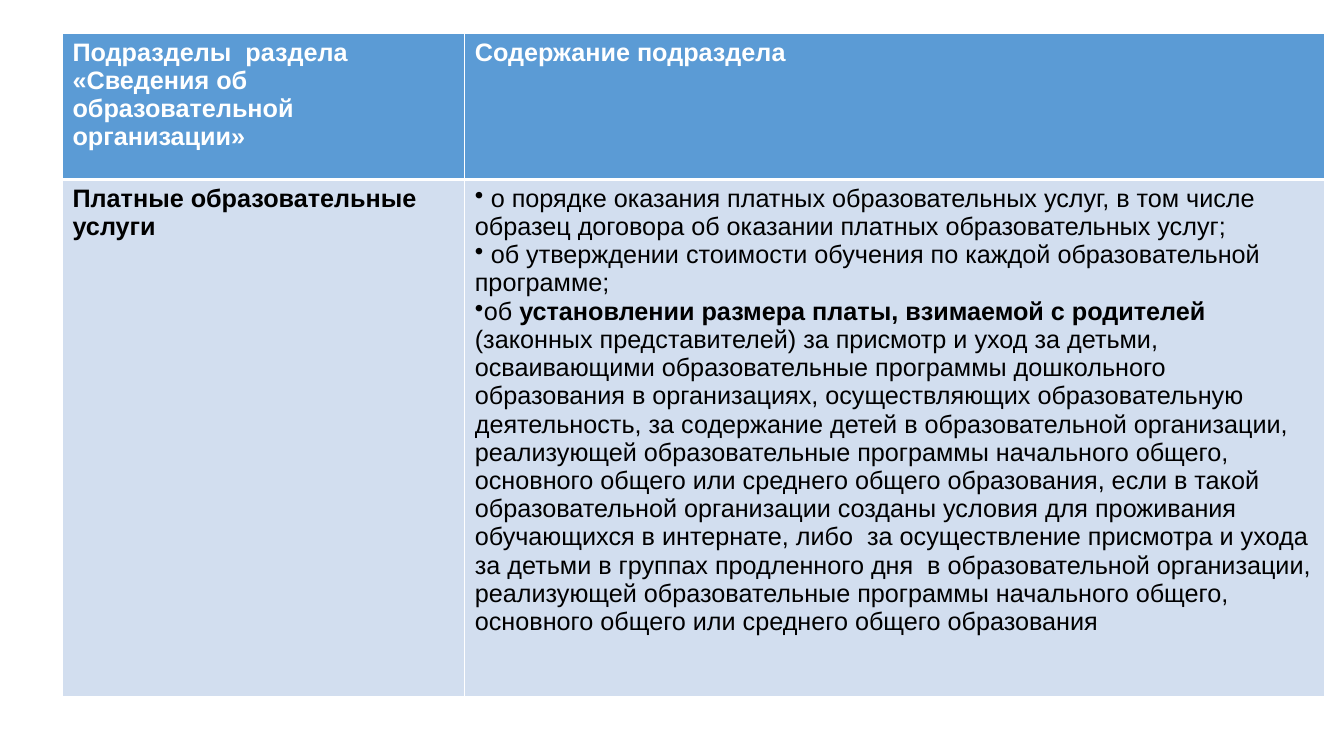
"""Build a slide with a table on paid educational services."""
import pptx
import pptx.dml.color
import pptx.oxml
import pptx.oxml.ns
import pptx.util

WHITE = pptx.dml.color.RGBColor(0xFF, 0xFF, 0xFF)
BLACK = pptx.dml.color.RGBColor(0x00, 0x00, 0x00)
HEADER_BLUE = pptx.dml.color.RGBColor(0x5B, 0x9B, 0xD5)
BODY_BLUE = pptx.dml.color.RGBColor(0xD2, 0xDE, 0xEF)
COLUMN_WIDTHS = [3.99, 8.53]
ROW_HEIGHTS = [1.45, 5.13]

HEADINGS = ["Подразделы  раздела «Сведения об образовательной организации»", "Содержание подраздела"]
SUBSECTION = "Платные образовательные услуги"
CONTENTS = [
    [(" о порядке оказания платных образовательных услуг, в том числе образец договора "
      "об оказании платных образовательных услуг;", False)],
    [(" об утверждении стоимости обучения по каждой образовательной программе;", False)],
    [("об ", False),
     ("установлении размера платы, взимаемой с родителей ", True),
     ("(законных представителей) за присмотр и уход за детьми, осваивающими образовательные "
      "программы дошкольного образования в организациях, осуществляющих образовательную "
      "деятельность, за содержание детей в образовательной организации, реализующей "
      "образовательные программы начального общего, основного общего или среднего общего "
      "образования, если в такой образовательной организации созданы условия для проживания "
      "обучающихся в интернате, либо  за осуществление присмотра и ухода за детьми в группах "
      "продленного дня  в образовательной организации, реализующей образовательные программы "
      "начального общего, основного общего или среднего общего образования", False)],
]


def write(paragraph, text, color=BLACK, bold=True):
    run = paragraph.add_run()
    run.text = text
    run.font.name = "Arial"
    run.font.size = pptx.util.Pt(18)
    run.font.bold = bold
    run.font.color.rgb = color


deck = pptx.Presentation()
deck.slide_width = pptx.util.Inches(13.33)
deck.slide_height = pptx.util.Inches(7.5)
slide = deck.slides.add_slide(deck.slide_layouts[6])
services = slide.shapes.add_table(
    len(ROW_HEIGHTS), len(COLUMN_WIDTHS), pptx.util.Inches(0.62), pptx.util.Inches(0.33),
    pptx.util.Inches(sum(COLUMN_WIDTHS)), pptx.util.Inches(sum(ROW_HEIGHTS))).table
for column, width in zip(services.columns, COLUMN_WIDTHS):
    column.width = pptx.util.Inches(width)
for row, height in zip(services.rows, ROW_HEIGHTS):
    row.height = pptx.util.Inches(height)

for row_number, (row, fill) in enumerate(zip(services.rows, [HEADER_BLUE, BODY_BLUE])):
    for cell in row.cells:
        cell.fill.solid()
        cell.fill.fore_color.rgb = fill
        cell_format = cell.fill._xPr
        for position, side in enumerate("LRTB"):
            on_header_edge = (row_number, side) in [(0, "B"), (1, "T")]
            border_width = pptx.util.Pt(3 if on_header_edge else 1)
            cell_format.insert(position, pptx.oxml.parse_xml(
                f'<a:ln{side} {pptx.oxml.ns.nsdecls("a")} w="{border_width}">'
                f'<a:solidFill><a:srgbClr val="{WHITE}"/></a:solidFill></a:ln{side}>'))

for column_number, heading in enumerate(HEADINGS):
    write(services.cell(0, column_number).text_frame.paragraphs[0], heading, color=WHITE)
write(services.cell(1, 0).text_frame.paragraphs[0], SUBSECTION)

details = services.cell(1, 1).text_frame
for number, item in enumerate(CONTENTS):
    paragraph = details.add_paragraph() if number else details.paragraphs[0]
    paragraph._p.get_or_add_pPr().append(pptx.oxml.parse_xml(
        f'<a:buChar {pptx.oxml.ns.nsdecls("a")} char="•"/>'))
    for text, bold in item:
        write(paragraph, text, bold=bold)

deck.save("out.pptx")
